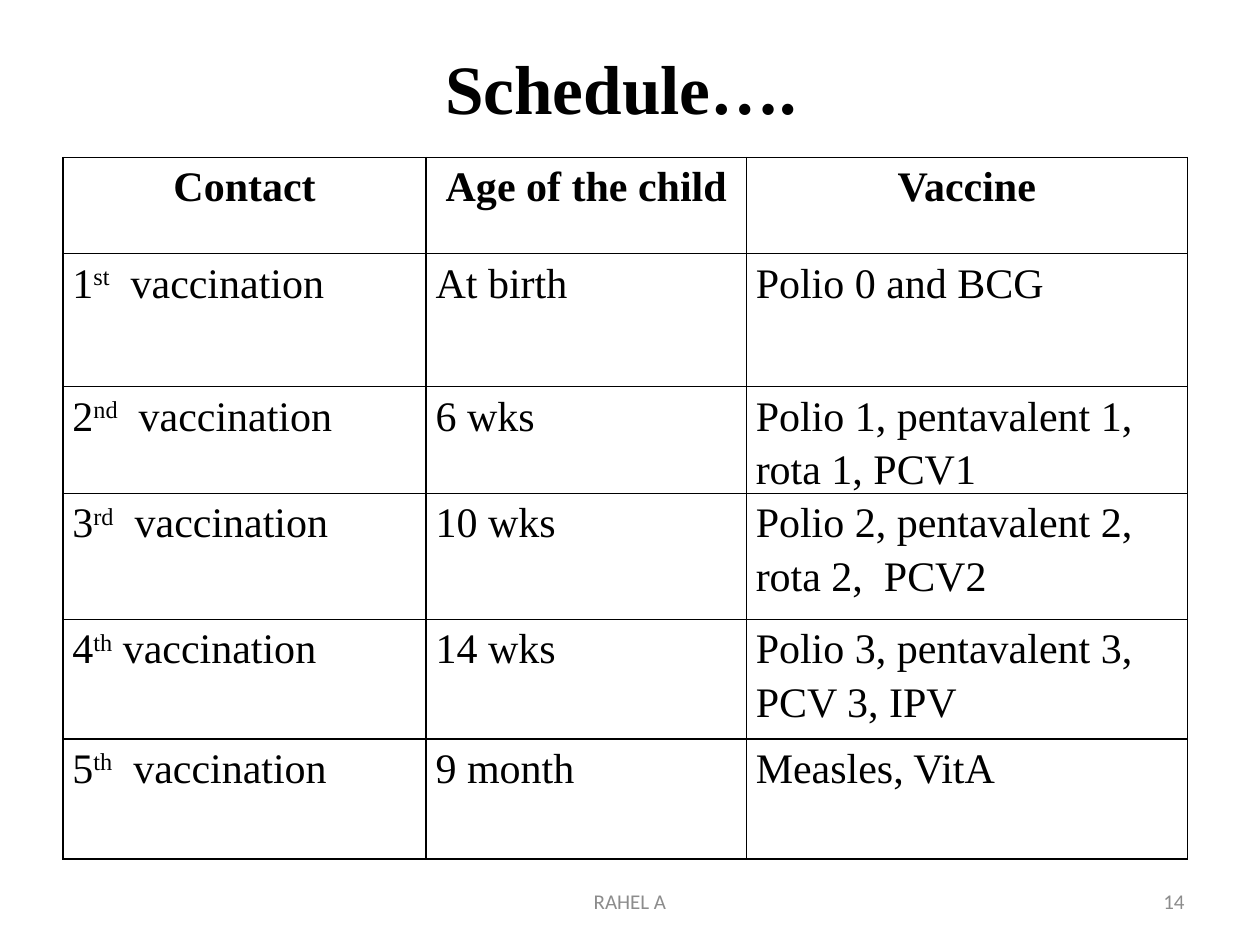
import pptx
import pptx.util
import pptx.dml.color
import pptx.enum.text
import pptx.oxml
import pptx.oxml.ns

Pt = pptx.util.Pt
RGB = pptx.dml.color.RGBColor
ALIGN = pptx.enum.text.PP_ALIGN
ANCHOR = pptx.enum.text.MSO_ANCHOR

BLACK = RGB(0, 0, 0)
GRAY = RGB(0x8C, 0x8C, 0x8C)

COLS = [207.5, 183, 252]
ROWS = [55, 76, 56, 72, 68.4, 68.4]
HEADS = ["Contact", "Age of the child", "Vaccine"]
VISITS = [
    (["1", "st", "  vaccination"], "At birth", "Polio 0 and BCG"),
    (["2", "nd", "  vaccination"], "6 wks", "Polio 1, pentavalent 1, rota 1, PCV1"),
    (["3", "rd", "  vaccination"], "10 wks", "Polio 2, pentavalent 2, rota 2,  PCV2"),
    (["4", "th", " vaccination"], "14 wks", "Polio 3, pentavalent 3, PCV 3, IPV"),
    (["5", "th", "  vaccination"], "9 month", "Measles, VitA"),
]


def apply(obj, vals):
    for key, val in vals.items():
        setattr(obj, key, val)


class Deck:
    serif = {"name": "Times New Roman", "bold": False}
    sans = {"name": "Calibri", "size": Pt(12)}
    inset = {"margin_left": Pt(5.4), "margin_right": Pt(5.4),
             "margin_top": 0, "margin_bottom": 0}

    def __init__(self, prs):
        self.slide = prs.slides.add_slide(prs.slide_layouts[5])

    def text(self, para, parts, font, color, align):
        para.alignment = align
        for spot, part in enumerate(parts):
            run = para.add_run()
            run.text = part
            apply(run.font, font)
            run.font.color.rgb = color
            if spot == 1:
                run._r.get_or_add_rPr().set("baseline", "30000")

    def title(self, text, left, top, width, height):
        box = self.slide.shapes.title
        apply(box, {"left": Pt(left), "top": Pt(top),
                    "width": Pt(width), "height": Pt(height)})
        apply(box.text_frame, {"vertical_anchor": ANCHOR.MIDDLE, "word_wrap": True})
        font = {**self.serif, "size": Pt(39.6), "bold": True}
        self.text(box.text_frame.paragraphs[0], [text], font, BLACK, ALIGN.CENTER)

    def label(self, text, left, top, width, height, align):
        box = self.slide.shapes.add_textbox(Pt(left), Pt(top), Pt(width), Pt(height))
        apply(box.text_frame, {"vertical_anchor": ANCHOR.MIDDLE, "word_wrap": True})
        self.text(box.text_frame.paragraphs[0], [text], self.sans, GRAY, align)

    def border(self, cell):
        props = cell._tc.get_or_add_tcPr()
        for side in "LRTB":
            props.append(pptx.oxml.parse_xml(
                f'<a:ln{side} {pptx.oxml.ns.nsdecls("a")} w="{Pt(1)}">'
                f'<a:solidFill><a:srgbClr val="{BLACK}"/></a:solidFill></a:ln{side}>'))

    def cell(self, cell, parts, head):
        self.border(cell)
        cell.fill.background()
        apply(cell, self.inset)
        para = cell.text_frame.paragraphs[0]
        para.line_spacing = 1.15
        font = {**self.serif, "size": Pt(24), "bold": head}
        self.text(para, parts, font, BLACK, ALIGN.CENTER if head else ALIGN.LEFT)

    def table(self, data, left, top):
        frame = self.slide.shapes.add_table(
            len(ROWS), len(COLS), Pt(left), Pt(top), Pt(sum(COLS)), Pt(sum(ROWS)))
        grid = frame.table
        apply(grid, {"first_row": False, "horz_banding": False})
        for col, width in zip(grid.columns, COLS):
            col.width = Pt(width)
        for row, height in zip(grid.rows, ROWS):
            row.height = Pt(height)
        for r, line in enumerate(data):
            for c, item in enumerate(line):
                parts = [item] if isinstance(item, str) else item
                self.cell(grid.cell(r, c), parts, r == 0)


def main():
    prs = pptx.Presentation()
    apply(prs, {"slide_width": Pt(720), "slide_height": Pt(540)})
    deck = Deck(prs)
    deck.title("Schedule…. ", 36, 21.6, 648, 56)
    deck.table([HEADS, *VISITS], 36, 90)
    deck.label("14", 516, 500.5, 168, 28.75, ALIGN.RIGHT)
    deck.label("RAHEL A", 246, 500.5, 228, 28.75, ALIGN.CENTER)
    prs.save("out.pptx")


if __name__ == "__main__":
    main()
